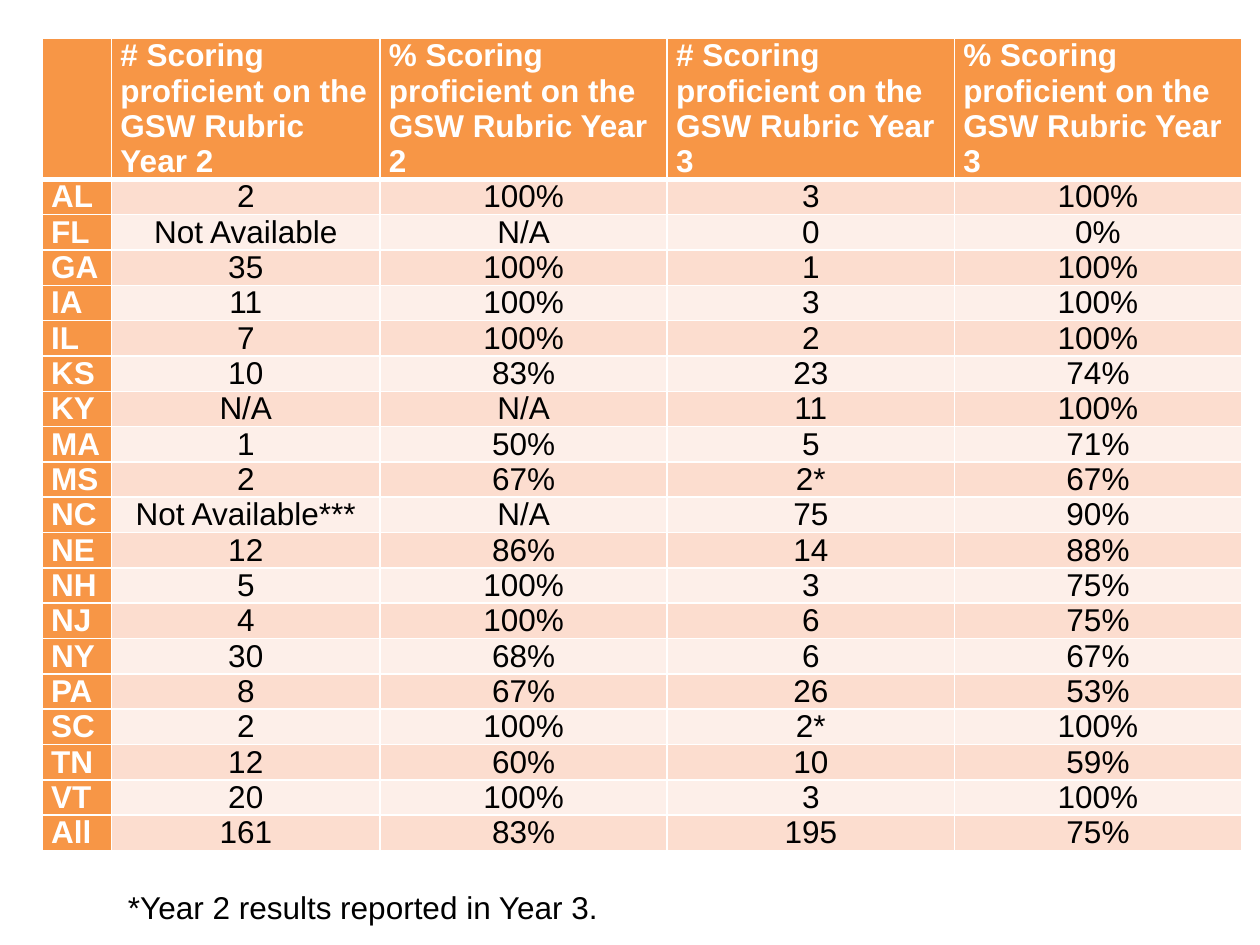
from typing import Any, NamedTuple

import pptx
import pptx.dml.color
import pptx.enum.text
import pptx.oxml
import pptx.oxml.ns
import pptx.util
from pptx.util import Cm

COLORS = {
    "accent": "F79646",
    "band_dark": "FCDDCF",
    "band_light": "FDEFE9",
    "white": "FFFFFF",
    "black": "000000",
}
ANCHOR = pptx.enum.text.MSO_ANCHOR
ALIGN = pptx.enum.text.PP_ALIGN
FONT = {"name": "Arial", "size": pptx.util.Pt(18)}
COLUMN_WIDTHS = [1.4, 5.41, 5.79, 5.79, 5.79]
HEADER_HEIGHT = 2.82
ROW_HEIGHT = 0.71


class StateResult(NamedTuple):
    state: str
    year_2_count: str
    year_2_percent: str
    year_3_count: str
    year_3_percent: str


class CellStyle(NamedTuple):
    fill: str
    text: str
    bold: bool
    anchor: Any
    alignment: Any
    bottom_border: int = 1


HEADERS = [""] + [
    f"{unit} Scoring proficient on the GSW Rubric Year {year}"
    for year in (2, 3)
    for unit in "#%"
]
RESULTS = [
    StateResult("AL", "2", "100%", "3", "100%"),
    StateResult("FL", "Not Available", "N/A", "0", "0%"),
    StateResult("GA", "35", "100%", "1", "100%"),
    StateResult("IA", "11", "100%", "3", "100%"),
    StateResult("IL", "7", "100%", "2", "100%"),
    StateResult("KS", "10", "83%", "23", "74%"),
    StateResult("KY", "N/A", "N/A", "11", "100%"),
    StateResult("MA", "1", "50%", "5", "71%"),
    StateResult("MS", "2", "67%", "2*", "67%"),
    StateResult("NC", "Not Available***", "N/A", "75", "90%"),
    StateResult("NE", "12", "86%", "14", "88%"),
    StateResult("NH", "5", "100%", "3", "75%"),
    StateResult("NJ", "4", "100%", "6", "75%"),
    StateResult("NY", "30", "68%", "6", "67%"),
    StateResult("PA", "8", "67%", "26", "53%"),
    StateResult("SC", "2", "100%", "2*", "100%"),
    StateResult("TN", "12", "60%", "10", "59%"),
    StateResult("VT", "20", "100%", "3", "100%"),
    StateResult("All", "161", "83%", "195", "75%"),
]


def rgb(name: str) -> pptx.dml.color.RGBColor:
    return pptx.dml.color.RGBColor.from_string(COLORS[name])


def format_font(font: Any, color: str, bold: bool = False) -> None:
    for attribute, value in {**FONT, "bold": bold}.items():
        setattr(font, attribute, value)
    font.color.rgb = rgb(color)


def add_borders(cell: Any, widths: dict[str, int]) -> None:
    """Give each named side a white line; call before the fill is set."""
    properties = cell._tc.get_or_add_tcPr()
    for side, width in widths.items():
        properties.append(pptx.oxml.parse_xml(
            f'<a:ln{side} {pptx.oxml.ns.nsdecls("a")} w="{pptx.util.Pt(width)}">'
            f'<a:solidFill><a:srgbClr val="{COLORS["white"]}"/></a:solidFill>'
            f'</a:ln{side}>'
        ))


def style_for(row: int, column: int) -> CellStyle:
    if row == 0:
        return CellStyle("accent", "white", True, ANCHOR.TOP, ALIGN.LEFT, 3)
    if column == 0:
        return CellStyle("accent", "white", True, ANCHOR.BOTTOM, ALIGN.LEFT)
    band = "band_dark" if row % 2 else "band_light"
    anchor = ANCHOR.MIDDLE if column < 3 else ANCHOR.BOTTOM
    return CellStyle(band, "black", False, anchor, ALIGN.CENTER)


def fill_cell(cell: Any, text: str, style: CellStyle, top_border: int) -> None:
    add_borders(cell, {"L": 1, "R": 1, "T": top_border, "B": style.bottom_border})
    cell.fill.solid()
    cell.fill.fore_color.rgb = rgb(style.fill)
    cell_format = {
        "margin_left": Cm(0.18), "margin_right": Cm(0.18),
        "margin_top": 0, "margin_bottom": 0,
        "vertical_anchor": style.anchor,
    }
    for attribute, value in cell_format.items():
        setattr(cell, attribute, value)
    cell.text = text
    paragraph = cell.text_frame.paragraphs[0]
    paragraph.alignment = style.alignment
    format_font(paragraph.font, style.text, style.bold)


def add_results_table(slide: Any) -> None:
    rows = [HEADERS, *RESULTS]
    heights = [HEADER_HEIGHT] + [ROW_HEIGHT] * len(RESULTS)
    table = slide.shapes.add_table(
        len(rows), len(HEADERS), Cm(0.85), Cm(0.77),
        Cm(sum(COLUMN_WIDTHS)), Cm(sum(heights)),
    ).table
    for column, width in zip(table.columns, COLUMN_WIDTHS):
        column.width = Cm(width)
    for row, height in zip(table.rows, heights):
        row.height = Cm(height)
    for row_index, texts in enumerate(rows):
        top_border = 3 if row_index == 1 else 1
        for column_index, text in enumerate(texts):
            fill_cell(table.cell(row_index, column_index), text,
                      style_for(row_index, column_index), top_border)


def add_footnote(slide: Any, text: str) -> None:
    text_box = slide.shapes.add_textbox(Cm(2.33), Cm(17.78), Cm(10.16), Cm(1.02))
    text_box.text_frame.word_wrap = True
    text_box.text_frame.text = text
    format_font(text_box.text_frame.paragraphs[0].font, "black")


def main() -> None:
    presentation = pptx.Presentation()
    presentation.slide_width = Cm(25.4)
    presentation.slide_height = Cm(19.05)
    slide = presentation.slides.add_slide(presentation.slide_layouts[6])
    add_results_table(slide)
    add_footnote(slide, "*Year 2 results reported in Year 3.")
    presentation.save("out.pptx")


if __name__ == "__main__":
    main()
